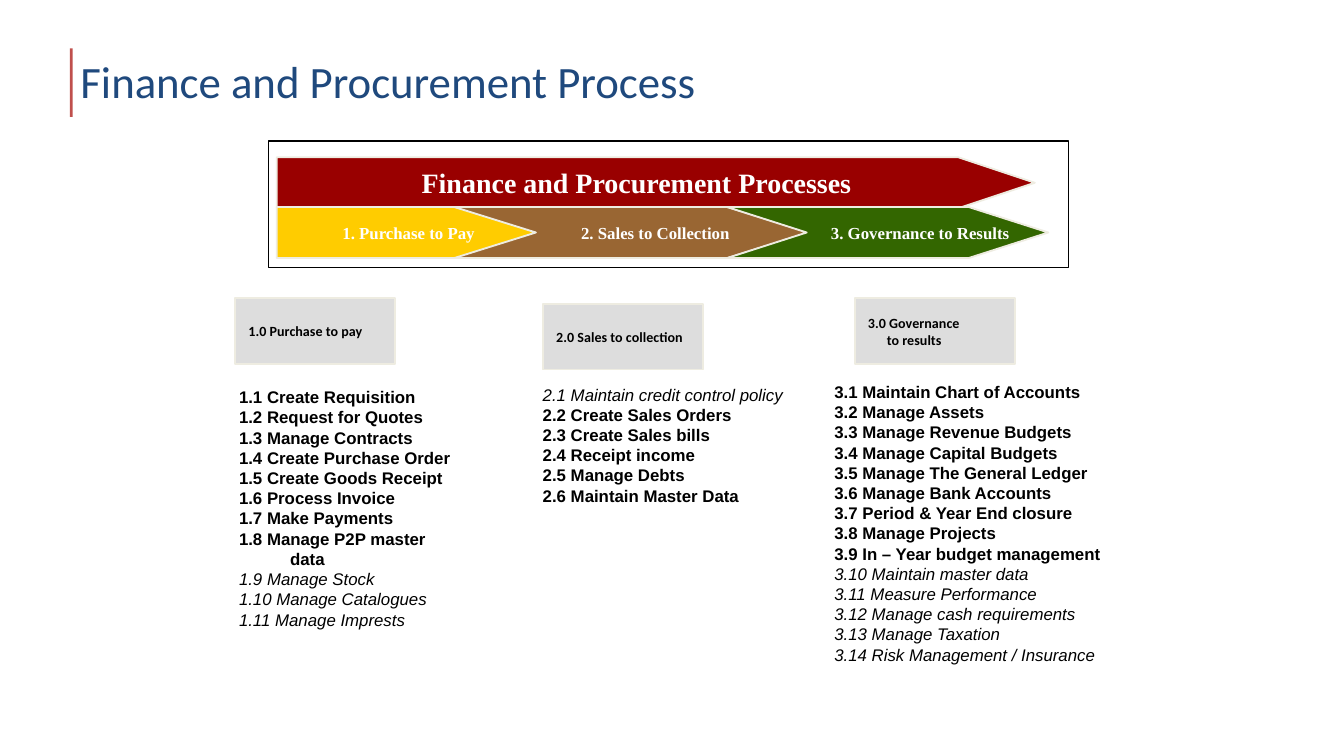
from pptx import Presentation
from pptx.dml.color import RGBColor as RGB
from pptx.enum.shapes import MSO_SHAPE as Shape
from pptx.enum.text import MSO_ANCHOR as Anchor, MSO_AUTO_SIZE as AutoSize, PP_ALIGN as Align
from pptx.util import Inches, Pt

CELL = 0.1  # inches
COLUMNS, ROWS = 100, 56.25
COLORS = {
    "title": "1F497D", "accent": "C0504D", "black": "000000", "white": "FFFFFF",
    "edge": "EEECE1", "red": "990000", "yellow": "FFCC00", "brown": "996633",
    "green": "336600", "grey": "DDDDDD",
}
PROCESSES = [
    # shape, left, width, point, left inset, colour, label
    (Shape.PENTAGON, 20.6, 22.7, 1.48, 0.7, "yellow", "1. Purchase to Pay"),
    (Shape.CHEVRON, 33.8, 26.4, 1.6, 4.5, "brown", "2. Sales to Collection"),
    (Shape.CHEVRON, 54.1, 23.9, 1.56, 5.8, "green", "3. Governance to Results"),
]
HEADINGS = [
    (17.5, 22.2, ["1.0 Purchase to pay"]),
    (40.4, 22.6, ["2.0 Sales to collection"]),
    (63.6, 22.2, ["3.0 Governance", "to results"]),
]
# box on the grid, wrap, steps, numbers of the steps set in italics
STEP_LISTS = [
    ((16.8, 28.3, 18.5, 20.7), True, [
        "Create Requisition", "Request for Quotes", "Manage Contracts",
        "Create Purchase Order", "Create Goods Receipt", "Process Invoice",
        "Make Payments", "Manage P2P master data", "Manage Stock",
        "Manage Catalogues", "Manage Imprests"], range(9, 12)),
    ((39.4, 28.1, 20, 11.6), False, [
        "Maintain credit control policy", "Create Sales Orders",
        "Create Sales bills", "Receipt income", "Manage Debts",
        "Maintain Master Data"], range(1, 2)),
    ((61.1, 27.9, 22.1, 23.7), False, [
        "Maintain Chart of Accounts", "Manage Assets", "Manage Revenue Budgets",
        "Manage Capital Budgets", "Manage The General Ledger",
        "Manage Bank Accounts", "Period & Year End closure", "Manage Projects",
        "In – Year budget management", "Maintain master data",
        "Measure Performance", "Manage cash requirements", "Manage Taxation",
        "Risk Management / Insurance"], range(10, 15)),
]


def grid(cells):
    return Inches(cells * CELL)


def color(name):
    return RGB.from_string(COLORS[name])


def write(paragraph, text, font="Arial", size=9, ink="black", bold=False,
          italic=False, align=Align.LEFT, margin=0, indent=0):
    props = paragraph._p.get_or_add_pPr()
    props.set("marL", str(grid(margin)))
    props.set("indent", str(grid(indent)))
    paragraph.alignment = align
    run = paragraph.add_run()
    run.text = text
    run.font.name, run.font.size = font, Pt(size)
    run.font.bold, run.font.italic = bold, italic
    run.font.color.rgb = color(ink)


class ProcessSlide:
    def __init__(self, deck):
        self.slide = deck.slides.add_slide(deck.slide_layouts[6])

    def block(self, kind, box, fill=None, line=None, weight=1, point=None):
        shape = self.slide.shapes.add_shape(kind, *map(grid, box))
        shape.shadow.inherit = False
        if point:
            shape.adjustments[0] = point
        if fill:
            shape.fill.solid()
            shape.fill.fore_color.rgb = color(fill)
        else:
            shape.fill.background()
        if line:
            shape.line.color.rgb = color(line)
            shape.line.width = Pt(weight)
        else:
            shape.line.fill.background()
        return shape

    def label(self, shape, lines, inset=1, margins=(0, 0), **style):
        """Write unwrapped lines, vertically centred in the shape."""
        frame = shape.text_frame
        frame.word_wrap = False
        frame.vertical_anchor = Anchor.MIDDLE
        frame.margin_left = grid(inset)
        for number, (line, margin) in enumerate(zip(lines, margins)):
            paragraph = frame.add_paragraph() if number else frame.paragraphs[0]
            write(paragraph, line, margin=margin, bold=True, **style)

    def arrow(self, kind, box, fill, point, text, size, inset=1):
        shape = self.block(kind, box, fill, "edge", point=point)
        self.label(shape, [text], inset, font="Times New Roman", size=size,
                   ink="white", align=Align.CENTER)

    def heading(self, left, top, lines):
        shape = self.block(Shape.RECTANGLE, (left, top, 11.9, 4.9), "grey", "edge")
        self.label(shape, lines, margins=(0, 1.4), font="Calibri", size=7.5)

    def text_box(self, box, wrap=True):
        frame = self.slide.shapes.add_textbox(*map(grid, box)).text_frame
        frame.word_wrap = wrap
        return frame

    def title(self, text):
        self.block(Shape.RECTANGLE, (5.2, 3.6, 0.2, 5.1), "accent")
        frame = self.text_box((5, 3.5, 86.9, 6.8))
        write(frame.paragraphs[0], text, font="Calibri", size=24, ink="title")

    def step_list(self, process, box, wrap, steps, italics):
        frame = self.text_box(box, wrap)
        frame.auto_size = AutoSize.SHAPE_TO_FIT_TEXT
        for number, step in enumerate(steps, 1):
            paragraph = frame.paragraphs[0] if number == 1 else frame.add_paragraph()
            minor = number in italics
            write(paragraph, f"{process}.{number} {step}", bold=not minor,
                  italic=minor, margin=3.8, indent=-3.8)


def main():
    deck = Presentation()
    deck.slide_width, deck.slide_height = grid(COLUMNS), grid(ROWS)
    page = ProcessSlide(deck)
    page.title("Finance and Procurement Process")
    page.block(Shape.RECTANGLE, (20, 10.5, 59.5, 9.4), line="black", weight=0.75)
    page.arrow(Shape.PENTAGON, (20.6, 11.7, 56.4, 3.8), "red", 1.5,
               "Finance and Procurement Processes", 15)
    for kind, left, width, point, inset, fill, text in PROCESSES:
        page.arrow(kind, (left, 15.4, width, 3.8), fill, point, text, 9, inset)
    for process, step_list in reversed(list(enumerate(STEP_LISTS, 1))):
        page.step_list(process, *step_list)
    for heading in HEADINGS:
        page.heading(*heading)
    deck.save("out.pptx")


if __name__ == "__main__":
    main()
